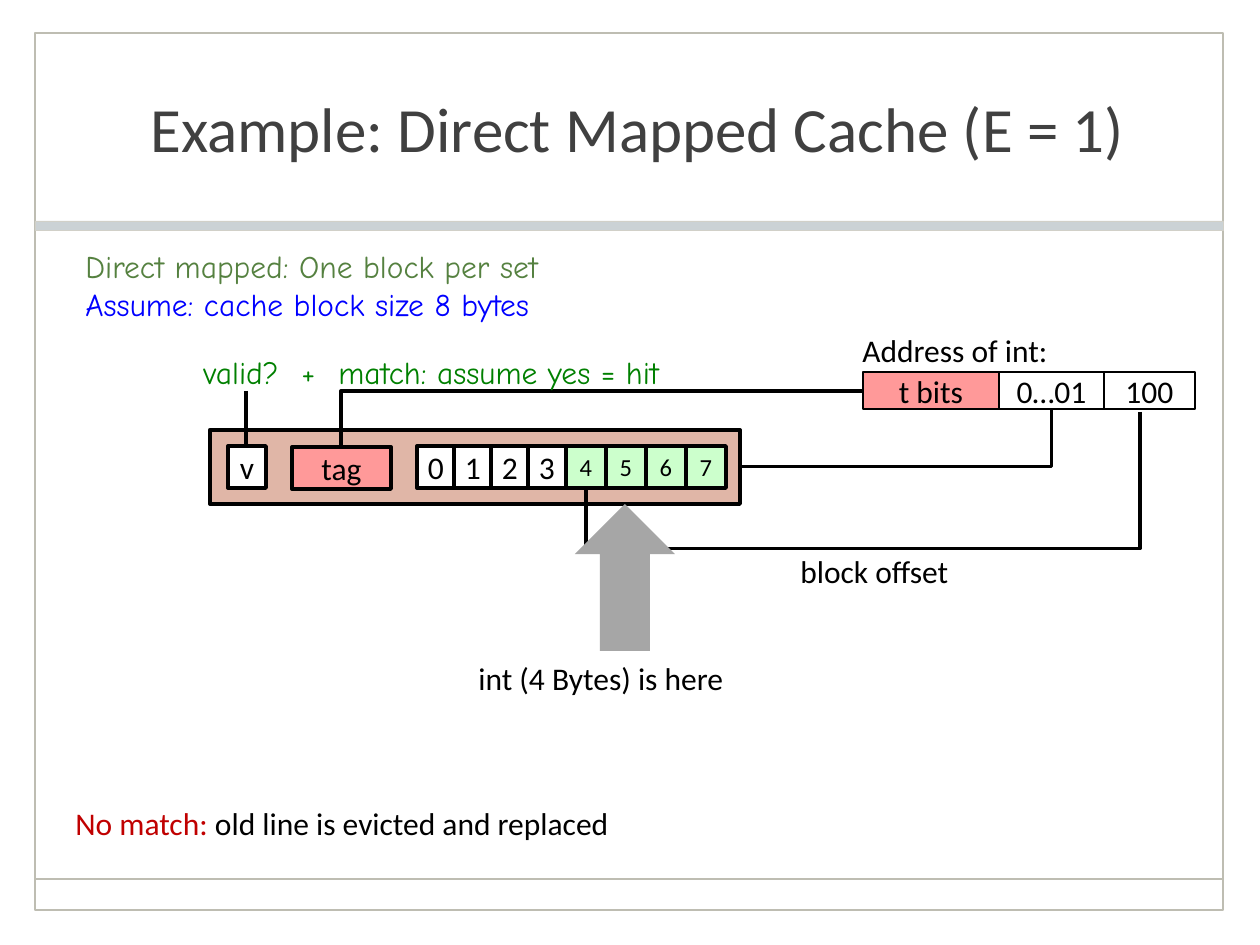
from lxml import etree
from pptx import Presentation
from pptx import util as u
from pptx.dml.color import RGBColor
from pptx.enum import shapes, text
from pptx.oxml import ns

PX = 7257
color = RGBColor.from_string
BODY, HAND = "Calibri", "Comic Neue"
BLACK, WHITE, PINK, GREEN, FRAME = "000000", "FFFFFF", "FF9999", "CCFFCC", "BEBDB2"
RECT = shapes.MSO_SHAPE.RECTANGLE

presentation = Presentation()
presentation.slide_width, presentation.slide_height = u.Inches(10), u.Inches(7.5)
slide = presentation.slides.add_slide(presentation.slide_layouts[5])


def add_run(paragraph, words, hue=BLACK, size=18, font=BODY):
    run = paragraph.add_run()
    run.text = words
    run.font.name, run.font.size = font, u.Pt(size)
    run.font.color.rgb = color(hue)


def add_box(left, top, width, height, fill=None, line=None, weight=1.0, label="", size=18, kind=RECT):
    shape = slide.shapes.add_shape(kind, left * PX, top * PX, width * PX, height * PX)
    shape.shadow.inherit = False
    if fill:
        shape.fill.solid()
        shape.fill.fore_color.rgb = color(fill)
    else:
        shape.fill.background()
    if line:
        shape.line.color.rgb = color(line)
        shape.line.width = u.Pt(weight)
    else:
        shape.line.fill.background()
    if label:
        frame = shape.text_frame
        frame.margin_left = frame.margin_right = frame.margin_top = frame.margin_bottom = 0
        frame.word_wrap = False
        frame.vertical_anchor = text.MSO_ANCHOR.MIDDLE
        frame.paragraphs[0].alignment = text.PP_ALIGN.CENTER
        add_run(frame.paragraphs[0], label, size=size)


add_box(35, 33, 1188, 877, line=FRAME)
add_box(35, 221, 1188, 9, fill="CBD2D5", line="D1D0C8", weight=0.25)

title = slide.shapes.title
title.left, title.top, title.width, title.height = 18 * PX, 74 * PX, 1239 * PX, 107 * PX
title.text_frame.vertical_anchor = text.MSO_ANCHOR.MIDDLE
title.text_frame.paragraphs[0].alignment = text.PP_ALIGN.CENTER
add_run(title.text_frame.paragraphs[0], "Example: Direct Mapped Cache (E = 1)", "404040", 36)

for left, width, fill, label in [(863, 136, PINK, "t bits"), (999, 105, WHITE, "0…01"), (1104, 91, WHITE, "100")]:
    add_box(left, 372, width, 37, fill, BLACK, 1, label)

add_box(210, 430, 530, 74, "E0B6A7", BLACK, 2.25)
add_box(228, 446, 38, 42, WHITE, BLACK, 2.25, "v")
add_box(292, 447, 99, 42, PINK, BLACK, 2.25, "tag")
for byte in range(4):
    add_box(417 + 37 * byte, 446, 38, 42, WHITE, BLACK, 2.25, str(byte))
for byte in range(4, 8):
    add_box(566 + 40 * (byte - 4), 446, 40, 42, GREEN, BLACK, 2.25, str(byte), 14)

for preset, left, top, width, height, hue, weight, turn in [
    ("line", 35, 879, 1188, 0, FRAME, 1, {}),
    ("line", 246, 391, 0, 55, BLACK, 2, {}),
    ("bentConnector2", 867, 282, 58, 311, BLACK, 2, {"rot": "5400000"}),
    ("bentConnector2", 341, 391, 522, 55, BLACK, 2, {"rot": "10800000", "flipV": "1"}),
    ("bentConnector3", 824, 174, 78, 554, BLACK, 2, {"rot": "5400000"}),
]:
    kind = shapes.MSO_CONNECTOR.STRAIGHT if preset == "line" else shapes.MSO_CONNECTOR.ELBOW
    connector = slide.shapes.add_connector(kind, left * PX, top * PX, (left + width) * PX, (top + height) * PX)
    connector.line.color.rgb = color(hue)
    connector.line.width = u.Pt(weight)
    properties = connector._element.spPr
    etree.SubElement(properties, ns.qn("a:effectLst"))
    geometry = properties.find(ns.qn("a:prstGeom"))
    geometry.set("prst", preset)
    for name, value in turn.items():
        properties.find(ns.qn("a:xfrm")).set(name, value)
    if preset == "bentConnector3":
        guides = geometry.find(ns.qn("a:avLst"))
        etree.SubElement(guides, ns.qn("a:gd"), name="adj1", fmla="val 175100")

add_box(575, 504, 100, 147, fill="A6A6A6", kind=shapes.MSO_SHAPE.UP_ARROW)

for left, top, width, height, font, lines in [
    (850, 325, 217, 38, BODY, [[("Address of int:", BLACK)]]),
    (326, 347, 378, 50, HAND, [[("match: assume yes = hit", "008000")]]),
    (191, 347, 145, 50, HAND, [[("valid?\t+", "008000")]]),
    (788, 546, 179, 38, BODY, [[("block offset", BLACK)]]),
    (73, 241, 519, 89, HAND, [[("Direct mapped: One block per set", "558140")],
                              [("Assume: cache block size 8 bytes", "0000FF")]]),
    (466, 653, 278, 38, BODY, [[("int (4 Bytes) is here", BLACK)]]),
    (63, 798, 575, 38, BODY, [[("No match: ", "C00000"), ("old line is evicted and replaced", BLACK)]]),
]:
    frame = slide.shapes.add_textbox(left * PX, top * PX, width * PX, height * PX).text_frame
    frame.word_wrap = False
    frame.auto_size = text.MSO_AUTO_SIZE.SHAPE_TO_FIT_TEXT
    for index, runs in enumerate(lines):
        paragraph = frame.add_paragraph() if index else frame.paragraphs[0]
        if "\t" in runs[0][0]:
            tabs = etree.SubElement(paragraph._p.get_or_add_pPr(), ns.qn("a:tabLst"))
            etree.SubElement(tabs, ns.qn("a:tab"), pos=str(98 * PX), algn="l")
        for words, hue in runs:
            add_run(paragraph, words, hue, font=font)

presentation.save("out.pptx")
